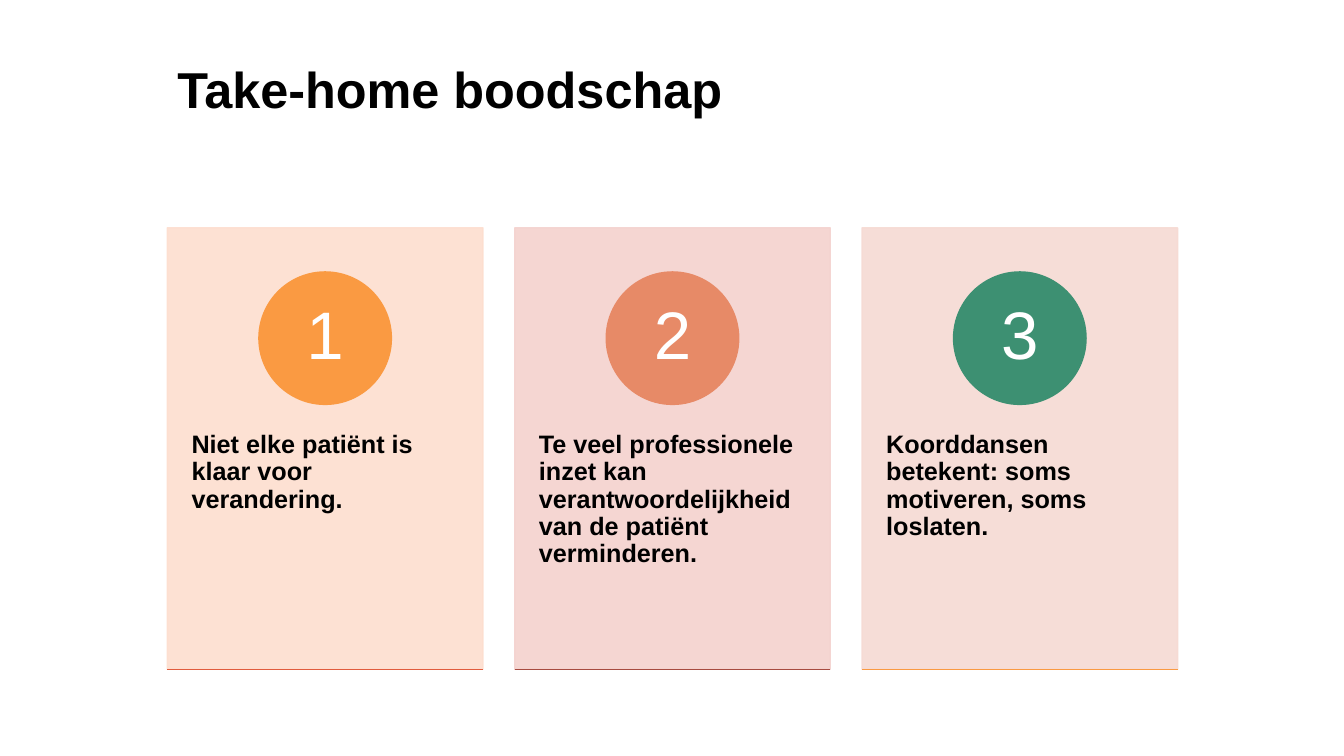
from dataclasses import dataclass

from lxml.etree import SubElement
from pptx import Presentation
from pptx.dml.color import RGBColor
from pptx.enum.shapes import MSO_CONNECTOR, MSO_SHAPE
from pptx.enum.text import MSO_ANCHOR, PP_ALIGN
from pptx.oxml.ns import qn
from pptx.util import Inches, Pt


@dataclass(frozen=True)
class Theme:
    font: str = "Arial"
    ink: str = "000000"
    white: str = "FFFFFF"
    title_size: int = 36
    message_size: int = 18
    number_size: int = 48
    line_width: int = 1
    card_opacity: int = 90


@dataclass(frozen=True)
class Grid:
    left: float = 1.66
    width: float = 10.02
    card_width: float = 3.13
    card_top: float = 2.26
    card_height: float = 4.38
    columns: int = 3

    def column(self, index):
        step = (self.width - self.card_width) / (self.columns - 1)
        return self.left + index * step


THEME = Theme()
GRID = Grid()

# Message, card colour, circle colour, base line colour
CARDS = [
    ("Niet elke patiënt is klaar voor verandering.",
     "FDDECF", "FA9A42", "E15C3D"),
    ("Te veel professionele inzet kan verantwoordelijkheid van de patiënt verminderen.",
     "F4D2CE", "E78A67", "A74B40"),
    ("Koorddansen betekent: soms motiveren, soms loslaten.",
     "F6DAD3", "3D9072", "FA9A42"),
]


def write(shape, text, size, color, bold=False, align=PP_ALIGN.LEFT,
          anchor=MSO_ANCHOR.TOP, insets=(0.1, 0.05)):
    """Fill a shape with one paragraph; insets are (sides, top and bottom)."""
    frame = shape.text_frame
    frame.text = text
    frame.word_wrap = True
    frame.vertical_anchor = anchor
    frame.margin_left = frame.margin_right = Inches(insets[0])
    frame.margin_top = frame.margin_bottom = Inches(insets[1])
    para = frame.paragraphs[0]
    para.alignment = align
    para.line_spacing = 0.9
    font = para.runs[0].font
    font.name, font.size, font.bold = THEME.font, Pt(size), bold
    font.color.rgb = RGBColor.from_string(color)


def add_text(page, area, text, size, **style):
    box = page.shapes.add_textbox(*map(Inches, area))
    write(box, text, size, THEME.ink, bold=True, **style)


def add_solid(page, kind, area, color, opacity=100):
    shape = page.shapes.add_shape(kind, *map(Inches, area))
    shape.shadow.inherit = False
    shape.fill.solid()
    shape.line.width = Pt(THEME.line_width)
    for paint in (shape.fill.fore_color, shape.line.color):
        paint.rgb = RGBColor.from_string(color)
    if opacity < 100:
        for tint in shape.element.spPr.iter(qn("a:srgbClr")):
            SubElement(tint, qn("a:alpha"), val=str(opacity * 1000))
    return shape


def add_base_line(page, left, top, width, color):
    line = page.shapes.add_connector(
        MSO_CONNECTOR.STRAIGHT, *map(Inches, (left, top, left + width, top)))
    line.line.width = Pt(THEME.line_width)
    line.line.color.rgb = RGBColor.from_string(color)
    SubElement(line.element.spPr, qn("a:effectLst"))


def add_card(page, index, message, card_color, circle_color, line_color):
    left, top = GRID.column(index), GRID.card_top
    width, height = GRID.card_width, GRID.card_height
    diameter = 0.3 * height
    add_solid(page, MSO_SHAPE.RECTANGLE, (left, top, width, height),
              card_color, THEME.card_opacity)
    add_text(page, (left, top + 0.38 * height, width, 0.6 * height),
             message, THEME.message_size, insets=(0.24, 0.36))
    circle = add_solid(
        page, MSO_SHAPE.OVAL,
        (left + (width - diameter) / 2, top + 0.1 * height, diameter, diameter),
        circle_color)
    write(circle, str(index + 1), THEME.number_size, THEME.white,
          align=PP_ALIGN.CENTER, anchor=MSO_ANCHOR.MIDDLE, insets=(0.1, 0.01))
    add_base_line(page, left, top + height, width, line_color)


def main():
    deck = Presentation()
    deck.slide_width, deck.slide_height = Inches(13.33), Inches(7.5)
    page = deck.slides.add_slide(deck.slide_layouts[6])
    add_text(page, (GRID.left, 0.6, GRID.width, 1.24),
             "Take-home boodschap", THEME.title_size)
    for index, card in enumerate(CARDS):
        add_card(page, index, *card)
    deck.save("out.pptx")


if __name__ == "__main__":
    main()
